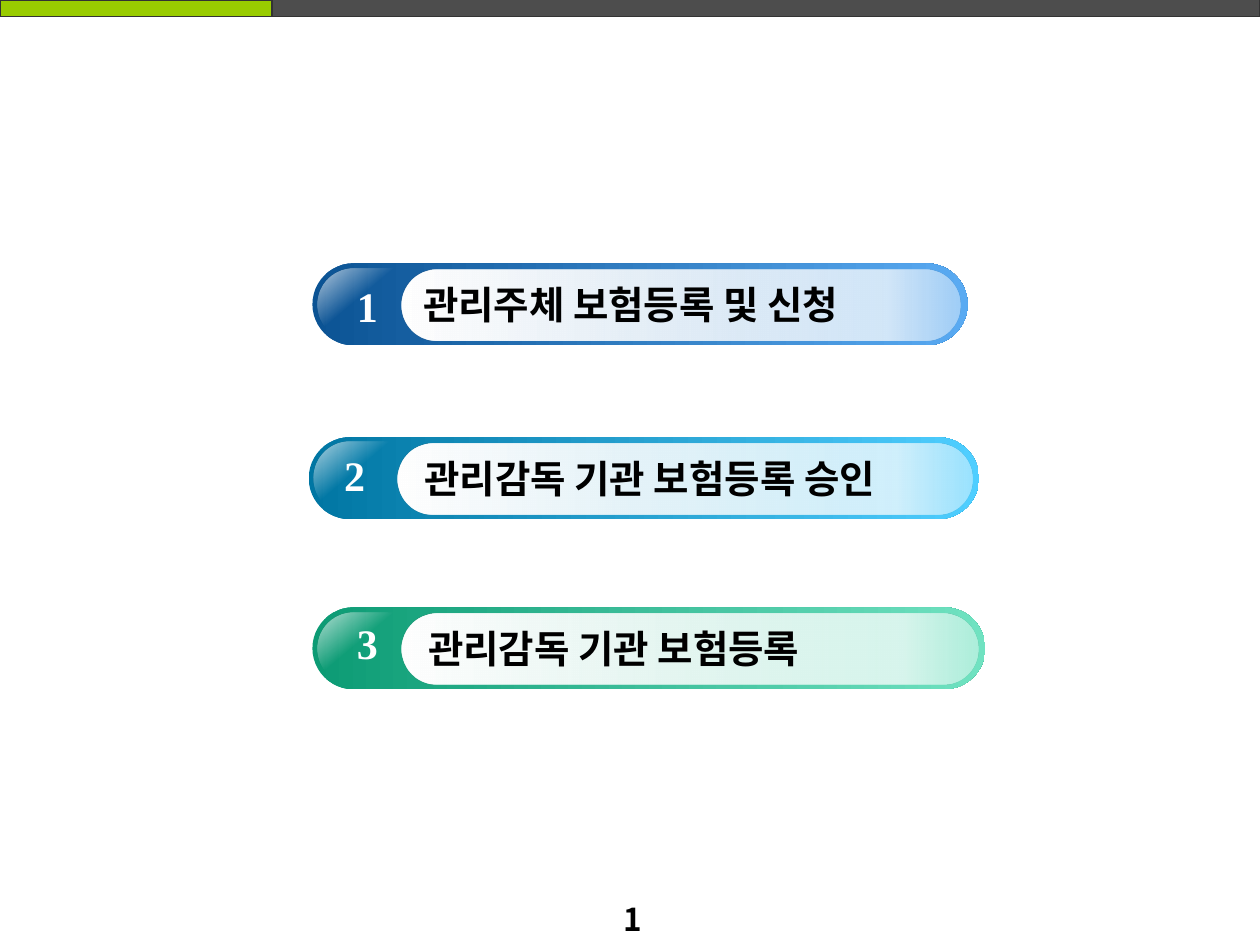
from dataclasses import dataclass

from lxml.etree import SubElement
from pptx import Presentation
from pptx.dml.color import RGBColor
from pptx.enum.shapes import MSO_SHAPE as Preset
from pptx.enum.text import MSO_ANCHOR as Anchor, PP_ALIGN as Align
from pptx.oxml.ns import qn
from pptx.util import Inches, Pt

COLUMNS, ROWS = 100, 75


@dataclass(frozen=True)
class Theme:
    accent: str = "99CC00"
    bar: str = "4D4D4D"
    bar_line: str = "333333"
    ink: str = "000000"
    white: str = "FFFFFF"
    title_font: str = "Noto Sans CJK KR"
    number_font: str = "Times New Roman"
    title_size: int = 22
    number_size: int = 24
    page_size: int = 18


@dataclass(frozen=True)
class Item:
    title: str
    start: str
    end: str
    left: float
    top: float
    width: float
    title_left: float
    number_left: float
    number_top: float


class Deck:
    def __init__(self, theme):
        self.theme = theme
        self.presentation = Presentation()
        self.presentation.slide_width = Inches(10)
        self.presentation.slide_height = Inches(7.5)
        self.slide = self.presentation.slides.add_slide(
            self.presentation.slide_layouts[6])

    def place(self, left, top, width, height):
        """Turn grid columns and rows into slide lengths."""
        column = self.presentation.slide_width / COLUMNS
        row = self.presentation.slide_height / ROWS
        return (round(left * column), round(top * row),
                round(width * column), round(height * row))

    def bar(self, at, color):
        bar = self.slide.shapes.add_shape(Preset.RECTANGLE, *self.place(*at))
        bar.shadow.inherit = False
        bar.fill.solid()
        bar.fill.fore_color.rgb = RGBColor.from_string(color)
        bar.line.color.rgb = RGBColor.from_string(self.theme.bar_line)
        bar.line.width = Pt(0.75)

    def pill(self, at, stops, angle=0):
        """Draw a fully rounded bar; stops are (position, colour, opacity) in percent."""
        pill = self.slide.shapes.add_shape(
            Preset.ROUNDED_RECTANGLE, *self.place(*at))
        pill.adjustments[0] = 0.5
        pill.shadow.inherit = False
        pill.line.fill.background()
        pill.fill.gradient()
        gradient = pill.element.spPr.find(qn("a:gradFill"))
        for child in list(gradient):
            gradient.remove(child)
        stop_list = SubElement(gradient, qn("a:gsLst"))
        for position, color, opacity in stops:
            stop = SubElement(stop_list, qn("a:gs"), pos=str(position * 1000))
            tint = SubElement(stop, qn("a:srgbClr"), val=color)
            if opacity < 100:
                SubElement(tint, qn("a:alpha"), val=str(opacity * 1000))
        SubElement(gradient, qn("a:lin"), ang=str(angle * 60000), scaled="0")

    def text(self, at, words, font, size, color, align=Align.LEFT,
             anchor=Anchor.MIDDLE, wrap=False):
        frame = self.slide.shapes.add_textbox(*self.place(*at)).text_frame
        frame.word_wrap = wrap
        frame.vertical_anchor = anchor
        paragraph = frame.paragraphs[0]
        paragraph.alignment = align
        run = paragraph.add_run()
        run.text = words
        look = {"name": font, "size": Pt(size), "bold": True}
        for attribute, value in look.items():
            setattr(run.font, attribute, value)
        run.font.color.rgb = RGBColor.from_string(color)
        SubElement(run.font._element, qn("a:ea"), typeface=font)

    def item(self, number, item):
        """Draw a numbered pill with its white panel, gloss and title."""
        theme, white = self.theme, self.theme.white
        self.pill((item.left, item.top, item.width, 6.5),
                  [(0, item.start, 100), (100, item.end, 100)])
        self.pill((item.left + 7.1, item.top + 0.5, item.width - 7.65, 5.6),
                  [(0, white, 100), (87, white, 74), (100, white, 42)])
        self.pill((item.left + 0.4, item.top + 0.4, 11.1, 5.7),
                  [(0, white, 70), (34, white, 0), (100, white, 0)], angle=50)
        self.text((item.title_left, item.top + 1, 42.6, 4.5), item.title,
                  theme.title_font, theme.title_size, theme.ink)
        self.text((item.number_left, item.number_top, 7.7, 5.6), str(number),
                  theme.number_font, theme.number_size, white, Align.CENTER)


ITEMS = [
    Item("관리주체 보험등록 및 신청", "0B5394", "59AAF2",
         24.8, 20.9, 52, 32.6, 25.3, 21.5),
    Item("관리감독 기관 보험등록 승인", "0076A3", "4FCEFF",
         24.5, 34.7, 53.2, 32.7, 24.3, 34.9),
    Item("관리감독 기관 보험등록", "0C9B74", "70E2C1",
         24.8, 48.2, 53.4, 33, 25.3, 48.2),
]


def main():
    theme = Theme()
    deck = Deck(theme)
    deck.bar((0, 0, 21.6, 1.3), theme.accent)
    deck.bar((21.6, -0.1, 78.4, 1.4), theme.bar)
    deck.text((35.7, 70.9, 29.1, 4.4), "1", theme.title_font, theme.page_size,
              theme.ink, Align.CENTER, Anchor.TOP, wrap=True)
    for number, item in enumerate(ITEMS, 1):
        deck.item(number, item)
    deck.presentation.save("out.pptx")


if __name__ == "__main__":
    main()
